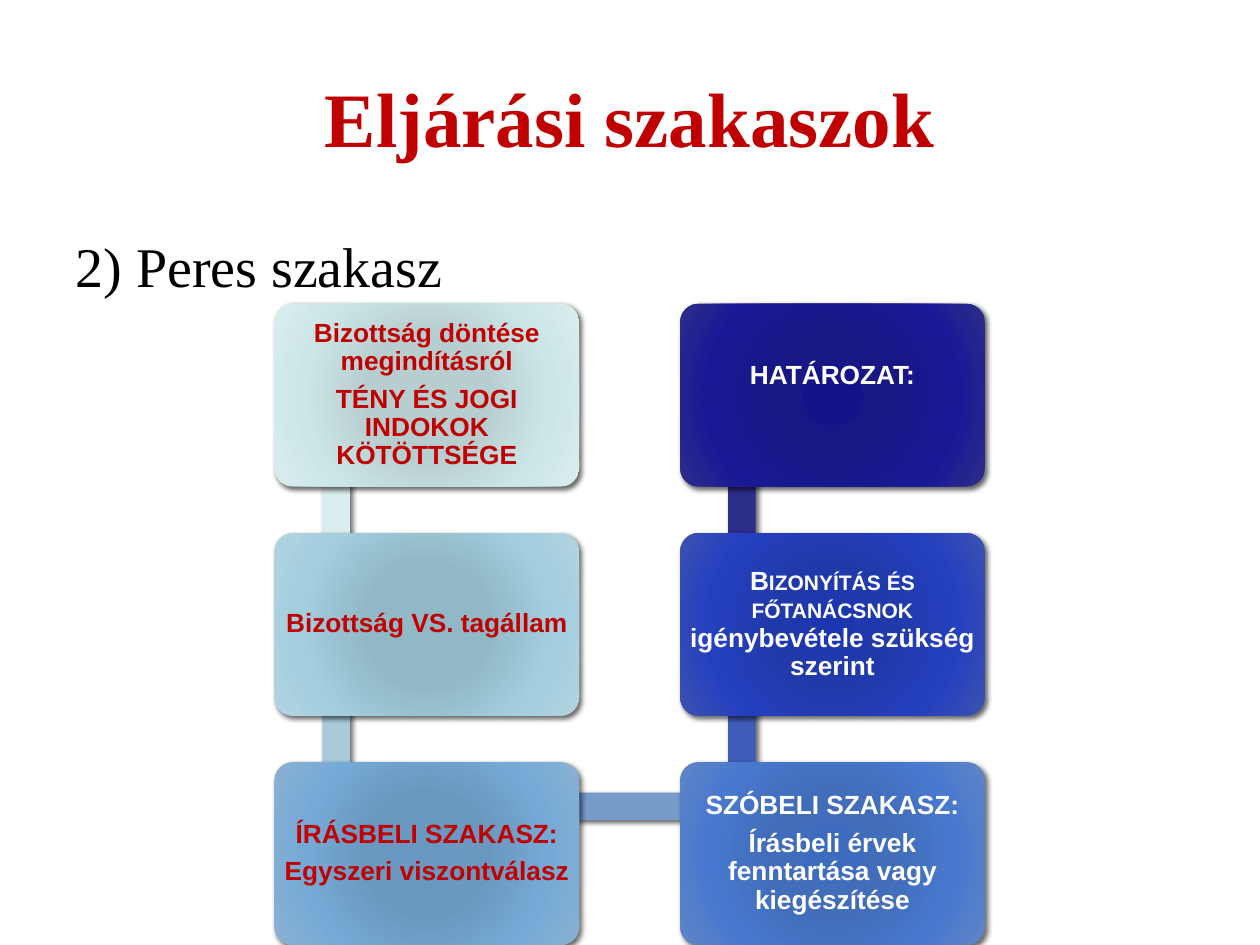
from lxml import etree
from pptx import Presentation
from pptx import util as u
from pptx.dml.color import RGBColor
from pptx.enum import shapes, text
from pptx.oxml.ns import qn

Pt = u.Pt
RED, WHITE, BLACK = "C00000", "FFFFFF", "000000"
BOX_W, BOX_H = 174.2, 104.4
COLUMN_STEP, ROW_STEP = 231.8, 131
BAR_THICKNESS = 15.8
GRADIENT_POSITIONS = (0, 34, 70, 100)

STAGES = [
    (0, 0, RED, "B6CFD1 B7CED0 CCE6E8 DAEDEF",
     [[("Bizottság döntése megindításról", False)],
      [("TÉNY ÉS JOGI INDOKOK KÖTÖTTSÉGE", False)]]),
    (0, 1, RED, "8FB9C9 91B8C7 A2CEDE B3D3E0",
     [[("Bizottság VS. tagállam", False)]]),
    (0, 2, RED, "6799C3 6A98C0 76AAD6 8AB1D2",
     [[("ÍRÁSBELI SZAKASZ:", False)], [("Egyszeri viszontválasz", False)]]),
    (1, 2, WHITE, "3D6BBE 416DBA 4879CF 6084C5",
     [[("SZÓBELI SZAKASZ:", False)],
      [("Írásbeli érvek fenntartása vagy kiegészítése", False)]]),
    (1, 1, WHITE, "1C36B0 213AAB 2440BF 3D52B1",
     [[("Bizonyítás és főtanácsnok ", True),
       ("igénybevétele szükség szerint", False)]]),
    (1, 0, WHITE, "13138A 171786 191996 2D2D8A",
     [[("HATÁROZAT:", False)]]),
]
BAR_COLORS = ["DAEDEF", "A8CBDC", "759CCB", "415DBA", "2D2D8A"]


def color(hex_code):
    return RGBColor.from_string(hex_code)


def style_font(paragraph, name, size, hex_code, bold=False):
    font = paragraph.font
    font.name, font.size, font.bold = name, Pt(size), bold
    font.color.rgb = color(hex_code)


def add_child(parent, tag, **attributes):
    return etree.SubElement(parent, qn(tag), {k: str(v) for k, v in attributes.items()})


def add_shadow(shape):
    shape.shadow.inherit = False
    effects = shape._element.spPr.find(qn("a:effectLst"))
    shadow = add_child(effects, "a:outerShdw", blurRad=Pt(3), dist=Pt(2),
                       dir=45 * 60000, algn="tl", rotWithShape=0)
    tint = add_child(shadow, "a:srgbClr", val=BLACK)
    add_child(tint, "a:alpha", val=60000)


def fill_radial(shape, hex_codes):
    shape.fill.gradient()
    gradient = shape._element.spPr.find(qn("a:gradFill"))
    for child in list(gradient):
        gradient.remove(child)
    stops = add_child(gradient, "a:gsLst")
    for position, hex_code in zip(GRADIENT_POSITIONS, hex_codes):
        stop = add_child(stops, "a:gs", pos=position * 1000)
        add_child(stop, "a:srgbClr", val=hex_code)
    circle = add_child(gradient, "a:path", path="circle")
    add_child(circle, "a:fillToRect", l=100000, t=100000, r=100000, b=100000)


def add_heading(slide, left, top, width, height):
    title = slide.shapes.title
    title.left, title.top, title.width, title.height = map(Pt, (left, top, width, height))
    title.text_frame.text = "Eljárási szakaszok"
    title.text_frame.vertical_anchor = text.MSO_ANCHOR.MIDDLE
    paragraph = title.text_frame.paragraphs[0]
    paragraph.alignment = text.PP_ALIGN.CENTER
    style_font(paragraph, "Times New Roman", 44, RED, True)


def add_subheading(slide, left, top, width, height):
    subheading = slide.shapes.add_textbox(*map(Pt, (left, top, width, height)))
    subheading.text_frame.word_wrap = True
    subheading.text_frame.text = "2) Peres szakasz"
    style_font(subheading.text_frame.paragraphs[0], "Times New Roman", 32, BLACK)


def add_bar(slide, left, top, width, height, hex_code):
    bar = slide.shapes.add_shape(shapes.MSO_SHAPE.RECTANGLE,
                                 *map(Pt, (left, top, width, height)))
    bar.fill.solid()
    bar.fill.fore_color.rgb = color(hex_code)
    bar.line.fill.background()
    add_shadow(bar)


def add_stage(slide, left, top, ink, gradient, paragraphs, lift):
    stage = slide.shapes.add_shape(shapes.MSO_SHAPE.ROUNDED_RECTANGLE,
                                   *map(Pt, (left, top, BOX_W, BOX_H)))
    stage.adjustments[0] = 0.1
    fill_radial(stage, gradient.split())
    stage.line.fill.background()
    add_shadow(stage)
    frame = stage.text_frame
    frame.word_wrap = True
    frame.vertical_anchor = text.MSO_ANCHOR.MIDDLE
    frame.margin_left = frame.margin_right = frame.margin_top = Pt(1.3)
    frame.margin_bottom = Pt(1.3 + lift)
    for index, runs in enumerate(paragraphs):
        paragraph = frame.add_paragraph() if index else frame.paragraphs[0]
        paragraph.alignment = text.PP_ALIGN.CENTER
        paragraph.line_spacing = 0.9
        paragraph.space_after = Pt(5.25)
        style_font(paragraph, "Arial", 15, ink, True)
        for words, small_caps in runs:
            run = paragraph.add_run()
            run.text = words
            if small_caps:
                run._r.get_or_add_rPr().set("cap", "small")


def add_process(slide, left, top):
    def corner(column, row):
        return left + column * COLUMN_STEP, top + row * ROW_STEP

    for start, end, hex_code in zip(STAGES, STAGES[1:], BAR_COLORS):
        x, y = corner(min(start[0], end[0]), min(start[1], end[1]))
        if start[0] == end[0]:
            add_bar(slide, x + 27.4, y + 26.3, BAR_THICKNESS, ROW_STEP, hex_code)
        else:
            add_bar(slide, x + 35.3, y + 17.3, COLUMN_STEP, BAR_THICKNESS, hex_code)
    for column, row, ink, gradient, paragraphs in STAGES:
        lift = 21.7 if (column, row) == (1, 0) else 0
        add_stage(slide, *corner(column, row), ink, gradient, paragraphs, lift)


def main():
    deck = Presentation()
    deck.slide_width, deck.slide_height = Pt(720), Pt(540)
    slide = deck.slides.add_slide(deck.slide_layouts[5])
    add_heading(slide, 36, 21.6, 648, 90)
    add_subheading(slide, 36, 129, 648, 44)
    add_process(slide, 156.8, 173.6)
    deck.save("out.pptx")


if __name__ == "__main__":
    main()
